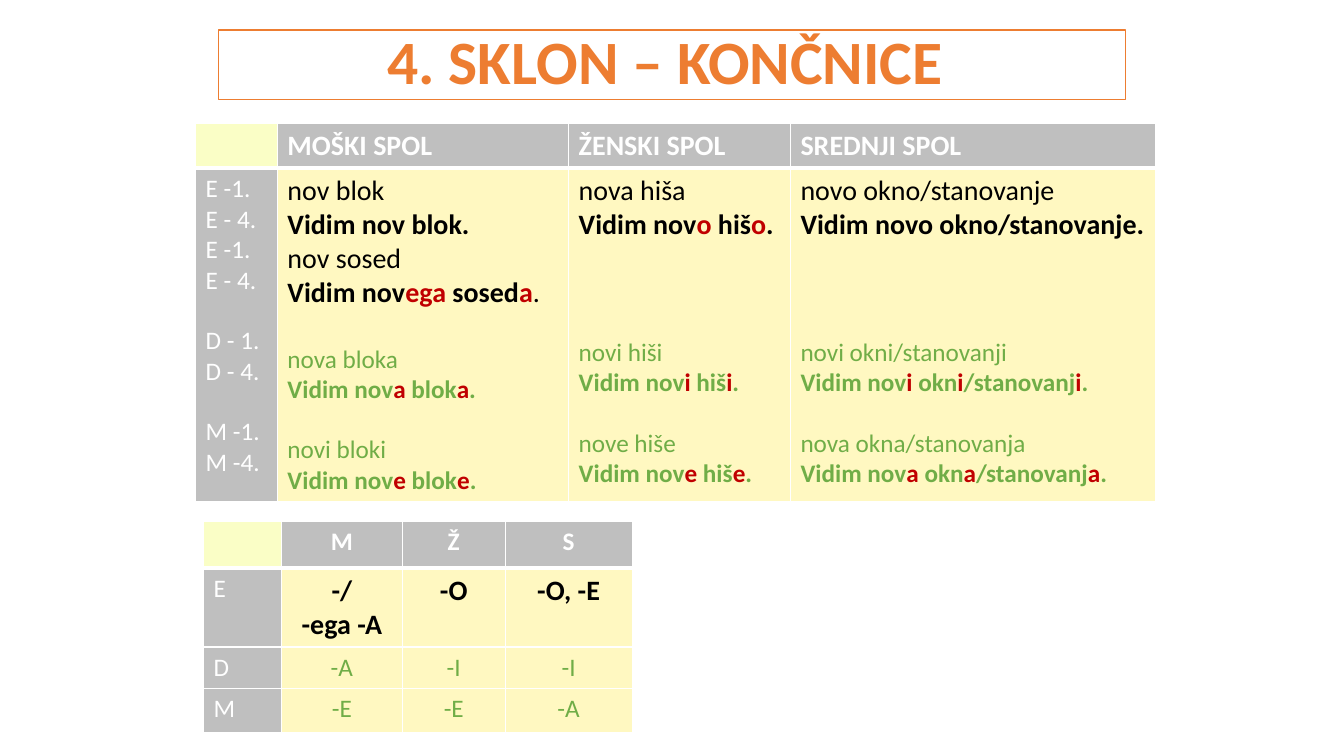
from dataclasses import dataclass

from lxml import etree
from pptx import Presentation
from pptx.dml.color import RGBColor
from pptx.enum.text import MSO_ANCHOR, MSO_AUTO_SIZE, PP_ALIGN
from pptx.oxml.ns import qn
from pptx.util import Cm, Pt

LEFT, CENTER = PP_ALIGN.LEFT, PP_ALIGN.CENTER
MIDDLE = MSO_ANCHOR.MIDDLE
NO_AUTOFIT = MSO_AUTO_SIZE.NONE

FONT = "Calibri"
WHITE = RGBColor(0xFF, 0xFF, 0xFF)
BLACK = RGBColor(0x00, 0x00, 0x00)
ORANGE = RGBColor(0xED, 0x7D, 0x31)
GREEN = RGBColor(0x70, 0xAD, 0x47)
RED = RGBColor(0xC0, 0x00, 0x00)
GRAY = RGBColor(0xBF, 0xBF, 0xBF)
CREAM = RGBColor(0xFF, 0xF8, 0xC1)
LEMON = RGBColor(0xFA, 0xFE, 0xC6)


@dataclass
class Line:
    """One paragraph; endings between asterisks are red, tail is never bold."""
    text: str
    size: int = 18
    color: RGBColor = WHITE
    bold: bool = False
    gap: float = 0
    tail: str = ""


def singular(noun, sentence, tail=""):
    return [Line(noun, 20, BLACK), Line(sentence, 20, BLACK, bold=True, tail=tail)]


def other_number(noun, sentence, gap=21):
    return [Line(noun, color=GREEN, gap=gap), Line(sentence, color=GREEN, bold=True)]


EXAMPLE_HEADS = ["MOŠKI SPOL", "ŽENSKI SPOL", "SREDNJI SPOL"]
CASE_LABELS = [
    Line(label, gap=21 if label in ("D - 1.", "M -1.") else 0)
    for label in ("E -1.", "E - 4.", "E -1.", "E - 4.", "D - 1.", "D - 4.", "M -1.", "M -4.")
]
MASCULINE = (
    singular("nov blok", "Vidim nov blok.")
    + singular("nov sosed", "Vidim nov*ega* sosed*a*", tail=".")
    + other_number("nova bloka", "Vidim nov*a* blok*a*.", gap=24)
    + other_number("novi bloki", "Vidim nov*e* blok*e*.")
)
FEMININE = (
    singular("nova hiša", "Vidim nov*o* hiš*o*.")
    + other_number("novi hiši", "Vidim nov*i* hiš*i*.", gap=68)
    + other_number("nove hiše", "Vidim nov*e* hiš*e*.")
)
NEUTER = (
    singular("novo okno/stanovanje", "Vidim novo okno/stanovanje.")
    + other_number("novi okni/stanovanji", "Vidim nov*i* okn*i*/stanovanj*i*.", gap=68)
    + other_number("nova okna/stanovanja", "Vidim nov*a* okn*a*/stanovanj*a*.")
)
ENDINGS = [
    ("E", [["-/", "-ega -A"], ["-O"], ["-O, -E"]]),
    ("D", [["-A"], ["-I"], ["-I"]]),
    ("M", [["-E"], ["-E"], ["-A"]]),
]


def add_span(para, text, size=18, color=WHITE, bold=False):
    span = para.add_run()
    span.text = text
    span.font.name = FONT
    span.font.size = Pt(size)
    span.font.bold = bold
    span.font.color.rgb = color


def write_lines(frame, lines, align=LEFT):
    for index, line in enumerate(lines):
        para = frame.add_paragraph() if index else frame.paragraphs[0]
        para.alignment = align
        para.space_before = Pt(line.gap)
        for part, text in enumerate(line.text.split("*")):
            if text:
                color = RED if part % 2 else line.color
                add_span(para, text, size=line.size, color=color, bold=line.bold)
        if line.tail:
            add_span(para, line.tail, size=line.size, color=line.color)


def set_borders(cell, bottom=0.96):
    properties = cell._tc.get_or_add_tcPr()
    widths = {"a:lnL": 0.96, "a:lnR": 0.96, "a:lnT": 0.96, "a:lnB": bottom}
    for index, (tag, width) in enumerate(widths.items()):
        border = etree.Element(qn(tag), w=str(Pt(width)))
        fill = etree.SubElement(border, qn("a:solidFill"))
        etree.SubElement(fill, qn("a:srgbClr"), val=str(WHITE))
        properties.insert(index, border)


def add_grid(page, left, top, widths, heights, rows, align=LEFT):
    """Place a table of line lists with a header row and a label column."""
    box = page.shapes.add_table(
        len(heights), len(widths), left, top, sum(widths), sum(heights))
    table = box.table
    table.horz_banding = False
    for column, width in zip(table.columns, widths):
        column.width = width
    for row, height in zip(table.rows, heights):
        row.height = height
    for r, row in enumerate(rows):
        for c, lines in enumerate(row):
            cell = table.cell(r, c)
            cell.fill.solid()
            if r == 0 and c == 0:
                cell.fill.fore_color.rgb = LEMON
            else:
                cell.fill.fore_color.rgb = CREAM if r and c else GRAY
            set_borders(cell, bottom=0.96 if r else 3)
            write_lines(cell.text_frame, lines, align=align if c else LEFT)


def add_title(page, left, top, width, height):
    title = page.shapes.title
    title.left, title.top, title.width, title.height = left, top, width, height
    title.fill.solid()
    title.fill.fore_color.rgb = WHITE
    title.line.color.rgb = ORANGE
    title.line.width = Pt(1)
    frame = title.text_frame
    frame.auto_size = NO_AUTOFIT
    frame.vertical_anchor = MIDDLE
    write_lines(frame, [Line("4. SKLON – KONČNICE ", 44, ORANGE, bold=True)], align=CENTER)
    frame.paragraphs[0].line_spacing = 0.9


def add_examples(page, left, top):
    header = [[]] + [[Line(head, 20, bold=True)] for head in EXAMPLE_HEADS]
    add_grid(
        page, left, top,
        widths=[Cm(2.06), Cm(7.34), Cm(5.59), Cm(9.19)],
        heights=[Cm(1.12), Cm(8.3)],
        rows=[header, [CASE_LABELS, MASCULINE, FEMININE, NEUTER]])


def add_endings(page, left, top):
    rows = [[[]] + [[Line(head, bold=True)] for head in "MŽS"]]
    for number, cells in ENDINGS:
        look = (20, BLACK, True) if number == "E" else (18, GREEN, False)
        rows.append([[Line(number)]] + [[Line(text, *look) for text in cell] for cell in cells])
    add_grid(
        page, left, top,
        widths=[Cm(1.96), Cm(3.05), Cm(2.59), Cm(3.2)],
        heights=[Cm(1.19), Cm(1.98), Cm(1.04), Cm(1.12)],
        rows=rows, align=CENTER)


def main():
    deck = Presentation()
    deck.slide_width, deck.slide_height = Cm(33.87), Cm(19.05)
    page = deck.slides.add_slide(deck.slide_layouts[5])
    add_title(page, Cm(5.51), Cm(0.76), Cm(22.86), Cm(1.75))
    add_examples(page, Cm(4.93), Cm(3.12))
    add_endings(page, Cm(5.13), Cm(13.13))
    deck.save("out.pptx")


if __name__ == "__main__":
    main()
